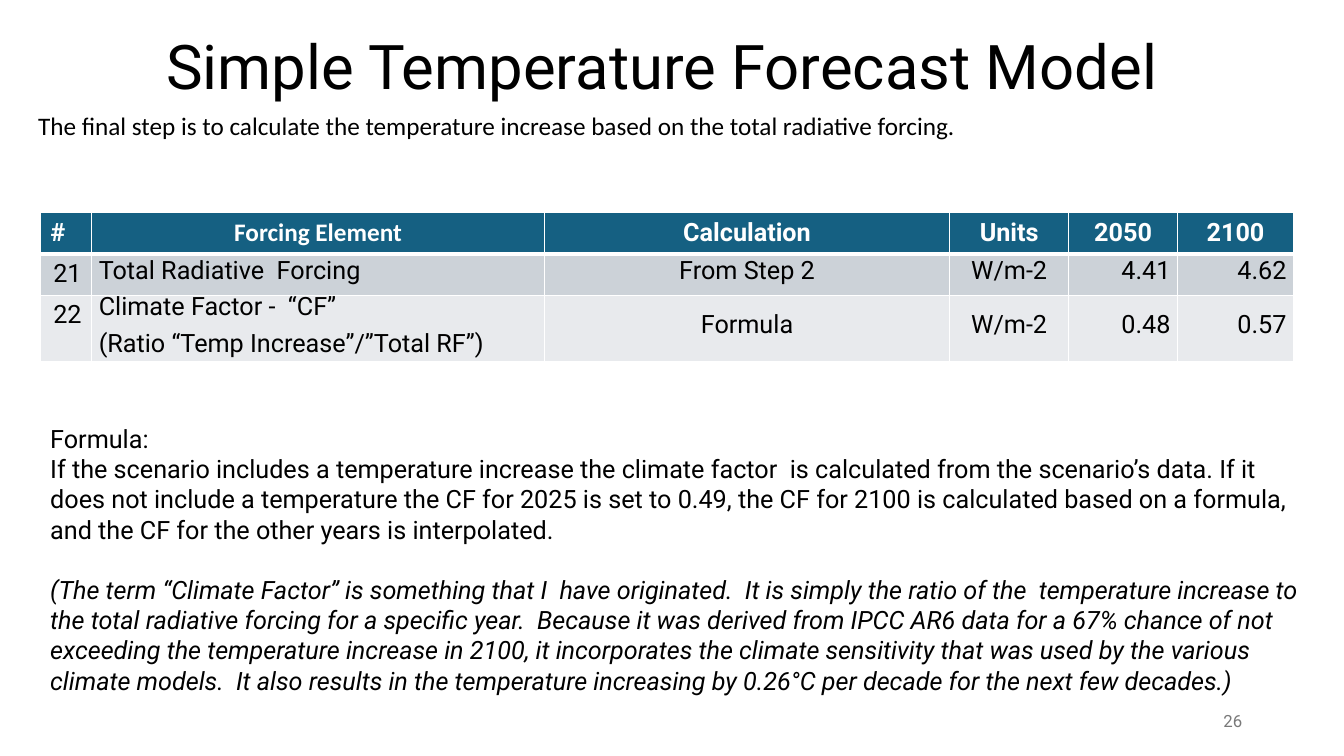
from lxml import etree
from pptx import Presentation
from pptx.dml.color import RGBColor
from pptx.enum.text import MSO_ANCHOR as Anchor, PP_ALIGN as Align
from pptx.oxml.ns import qn
from pptx.util import Inches, Pt

COLORS = {
    "text": "000000",
    "page_number": "797979",
    "header": "156082",
    "header_text": "FFFFFF",
    "border": "FFFFFF",
    "bands": ["CCD2D8", "E8EAED"],
}

COLUMN_WIDTHS = [0.51, 4.49, 4.02, 1.18, 1.08, 1.15]
ROW_HEIGHTS = [0.41, 0.41, 0.66]
COLUMN_ALIGNS = [Align.RIGHT, Align.LEFT, Align.CENTER,
                 Align.CENTER, Align.RIGHT, Align.RIGHT]
FORCING_ROWS = [
    ["#", "Forcing Element", "Calculation", "Units", "2050", "2100"],
    ["21", "Total Radiative  Forcing", "From Step 2", "W/m-2", "4.41", "4.62"],
    ["22", "Climate Factor -  “CF”\n(Ratio “Temp Increase”/”Total RF”)",
     "Formula", "W/m-2", "0.48", "0.57"],
]

INTRO = ("The final step is to calculate the temperature increase "
         "based on the total radiative forcing.")
FORMULA = (
    "Formula:\n"
    "If the scenario includes a temperature increase the climate factor  is "
    "calculated from the scenario’s data. If it does not include a temperature "
    "the CF for 2025 is set to 0.49, the CF for 2100 is calculated based on a "
    "formula, and the CF for the other years is interpolated."
)
CLIMATE_FACTOR_NOTE = (
    "(The term “Climate Factor” is something that I  have originated.  It is "
    "simply the ratio of the  temperature increase to the total radiative "
    "forcing for a specific year.  Because it was derived from IPCC AR6 data "
    "for a 67% chance of not exceeding the temperature increase in 2100, it "
    "incorporates the climate sensitivity that was used by the various climate "
    "models.  It also results in the temperature increasing by 0.26°C per "
    "decade for the next few decades.)"
)


def style_paragraph(paragraph, size=18, font="Roboto", color=COLORS["text"],
                    bold=False, italic=False, **layout):
    """Set the font, and any paragraph attributes given in layout."""
    font_values = {"size": Pt(size), "name": font, "bold": bold, "italic": italic}
    for name, value in font_values.items():
        setattr(paragraph.font, name, value)
    paragraph.font.color.rgb = RGBColor.from_string(color)
    for name, value in layout.items():
        setattr(paragraph, name, value)


def fill_text(frame, text, **style):
    frame.text = text
    for paragraph in frame.paragraphs:
        style_paragraph(paragraph, **style)


def add_text(slide, box, text, anchor=Anchor.TOP, **style):
    frame = slide.shapes.add_textbox(*map(Inches, box)).text_frame
    frame.word_wrap = True
    frame.vertical_anchor = anchor
    fill_text(frame, text, **style)
    return frame


def set_borders(cell, top, bottom):
    """Draw the four cell borders; the sides are one point wide."""
    properties = cell._tc.get_or_add_tcPr()
    widths = {"lnL": 1, "lnR": 1, "lnT": top, "lnB": bottom}
    for position, (tag, width) in enumerate(widths.items()):
        line = etree.Element(qn(f"a:{tag}"), w=str(Pt(width)))
        fill = etree.SubElement(line, qn("a:solidFill"))
        etree.SubElement(fill, qn("a:srgbClr"), val=COLORS["border"])
        properties.insert(position, line)


def cell_style(row, column):
    if row == 0:
        return {"bold": True, "color": COLORS["header_text"],
                "font": "Calibri" if column == 1 else "Roboto",
                "alignment": Align.CENTER if column else Align.LEFT}
    style = {"alignment": COLUMN_ALIGNS[column]}
    if column:
        style.update(line_spacing=Pt(16.5), space_after=Pt(10))
    return style


def style_cell(cell, row, column):
    cell.fill.solid()
    color = COLORS["bands"][row - 1] if row else COLORS["header"]
    cell.fill.fore_color.rgb = RGBColor.from_string(color)
    set_borders(cell, top=3 if row == 1 else 1, bottom=1 if row else 3)
    if row and column:
        cell_format = {
            "vertical_anchor": Anchor.MIDDLE,
            "margin_left": Inches(0.07), "margin_right": Inches(0.07),
            "margin_top": 0, "margin_bottom": 0,
        }
        for name, value in cell_format.items():
            setattr(cell, name, value)


def add_forcing_table(slide):
    table = slide.shapes.add_table(
        len(ROW_HEIGHTS), len(COLUMN_WIDTHS), Inches(0.4), Inches(2.11),
        Inches(sum(COLUMN_WIDTHS)), Inches(sum(ROW_HEIGHTS))).table
    for column, width in zip(table.columns, COLUMN_WIDTHS):
        column.width = Inches(width)
    for row, height in zip(table.rows, ROW_HEIGHTS):
        row.height = Inches(height)
    for r, texts in enumerate(FORCING_ROWS):
        for c, text in enumerate(texts):
            cell = table.cell(r, c)
            style_cell(cell, r, c)
            fill_text(cell.text_frame, text, **cell_style(r, c))


def add_explanation(slide):
    frame = add_text(slide, (0.4, 4.15, 12.74, 2.83), FORMULA)
    note = frame.add_paragraph()
    note.text = CLIMATE_FACTOR_NOTE
    style_paragraph(note, italic=True, space_before=Pt(21.5))


def main():
    presentation = Presentation()
    presentation.slide_width = Inches(13.33)
    presentation.slide_height = Inches(7.5)
    slide = presentation.slides.add_slide(presentation.slide_layouts[6])

    add_text(slide, (0.82, -0.04, 11.5, 1.45), "Simple Temperature Forecast Model",
             Anchor.MIDDLE, size=44, alignment=Align.CENTER, line_spacing=0.9)
    add_text(slide, (0.28, 1, 12.74, 0.43), INTRO, font="Calibri",
             line_spacing=1.15, space_after=Pt(10))
    add_forcing_table(slide)
    add_explanation(slide)
    add_text(slide, (9.42, 6.95, 3, 0.4), "26", Anchor.MIDDLE, size=12,
             color=COLORS["page_number"], alignment=Align.RIGHT)

    presentation.save("out.pptx")


if __name__ == "__main__":
    main()
